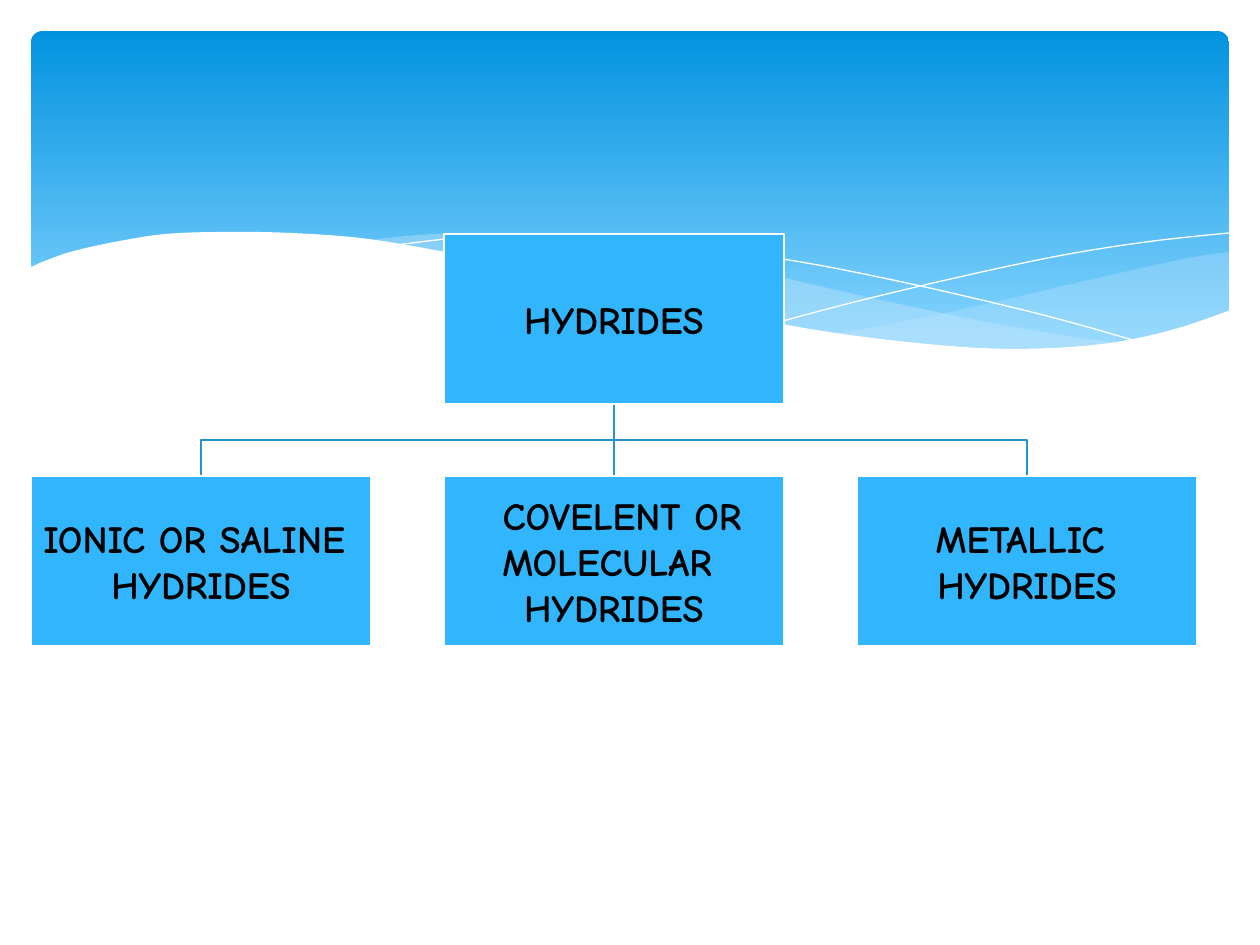
"""Builds a slide that charts the three classes of hydrides under a wavy blue band."""
import pptx
import pptx.dml.color
import pptx.enum.dml
import pptx.enum.shapes
import pptx.enum.text
import pptx.oxml
import pptx.oxml.ns
import pptx.util

SCALE = 914400 / 126
COLORS = {
    "band_top": "0293E0",
    "band_bottom": "83D3FE",
    "wave": "C6E7FC",
    "white": "FFFFFF",
    "branch": "2792CB",
    "box": "31B6FD",
    "text": "000000",
}
BOX_WIDTH, BOX_HEIGHT = 340, 170
BOX_LEFT, BOX_STEP = 31, 413
ROOT_TOP, LEAF_TOP = 234, 476

RIGHT_WAVE_TOP = [(1229, 252), (1194, 257), (1142, 268), (1085, 281), (982, 305),
                  (890, 324), (833, 334)]
RIGHT_WAVE_BOTTOM = [(833, 334), (888, 342), (954, 348), (1012, 350), (1076, 348),
                     (1130, 340), (1178, 330), (1229, 311)]
MIDDLE_WAVE_TOP = [(1125, 344), (1055, 334), (977, 320), (890, 302), (793, 280), (717, 262),
                   (648, 249), (586, 241), (503, 234), (433, 234), (360, 241)]
MIDDLE_WAVE_BOTTOM = [(360, 241), (431, 251), (509, 266), (566, 280), (668, 302), (757, 321),
                      (838, 335), (910, 345), (974, 349), (1043, 350), (1125, 344)]
FALLING_LINE = [(389, 246), (457, 238), (524, 236), (616, 239), (701, 248), (801, 262),
                (916, 285), (1047, 316), (1143, 343)]
RISING_LINE = [(772, 324), (847, 304), (942, 281), (1053, 257), (1146, 242), (1229, 233)]
WHITE_EDGE = [(1231, 310), (1172, 330), (1103, 344), (1019, 349), (937, 345), (842, 334),
              (760, 320), (667, 301), (563, 277), (460, 255), (368, 239), (290, 233),
              (223, 232), (166, 234), (120, 241), (74, 251), (45, 261), (29, 268)]

LEAVES = [
    [("IONIC OR SALINE ", 0), ("HYDRIDES", 0)],
    [("COVELENT OR", 16), ("MOLECULAR ", 0), ("HYDRIDES", 0)],
    [("METALLIC ", 0), ("HYDRIDES", 0)],
]


def emu(pixels):
    return pptx.util.Emu(round(pixels * SCALE))


def rgb(name):
    return pptx.dml.color.RGBColor.from_string(COLORS[name])


def smooth_curve(points, steps=5):
    padded = [points[0], *points, points[-1]]
    curve = [points[0]]
    for a, b, c, d in zip(padded, padded[1:], padded[2:], padded[3:]):
        for t in (step / steps for step in range(1, steps + 1)):
            curve.append(tuple(
                (2 * q + (r - p) * t + (2 * p - 5 * q + 4 * r - s) * t ** 2
                 + (3 * q - p - 3 * r + s) * t ** 3) / 2
                for p, q, r, s in zip(a, b, c, d)))
    return curve


class SlideBuilder:
    def __init__(self, slide, font="Comic Neue", size=22, line_width=1.25):
        self.slide = slide
        self.font = font
        self.size = size
        self.line_width = line_width

    def band(self, left, top, width, height):
        shape = self.slide.shapes.add_shape(
            pptx.enum.shapes.MSO_SHAPE.ROUNDED_RECTANGLE,
            emu(left), emu(top), emu(width), emu(height))
        shape.adjustments[0] = 0.034
        shape.shadow.inherit = False
        shape.line.fill.background()
        shape.fill.gradient()
        shape.fill.gradient_angle = 270
        stops = zip(shape.fill.gradient_stops, (0, 0.9), ("band_top", "band_bottom"))
        for stop, position, color in stops:
            stop.position = position
            stop.color.rgb = rgb(color)

    def outline(self, points, closed):
        corners = [(emu(x), emu(y)) for x, y in points]
        builder = self.slide.shapes.build_freeform(*corners[0])
        builder.add_line_segments(corners[1:], close=closed)
        shape = builder.convert_to_shape()
        shape.shadow.inherit = False
        return shape

    def area(self, points, color, opacity=100):
        shape = self.outline(points, True)
        shape.line.fill.background()
        shape.fill.solid()
        shape.fill.fore_color.rgb = rgb(color)
        if opacity < 100:
            color_element = shape.fill._xPr.find(".//" + pptx.oxml.ns.qn("a:srgbClr"))
            alpha = pptx.oxml.parse_xml(
                f'<a:alpha {pptx.oxml.ns.nsdecls("a")} val="{opacity * 1000}"/>')
            color_element.append(alpha)

    def polyline(self, points, color, width):
        shape = self.outline(points, False)
        shape.fill.background()
        shape.line.color.rgb = rgb(color)
        shape.line.width = pptx.util.Pt(width)

    def branch(self, points):
        self.polyline(points, "branch", self.line_width)

    def trunk(self, x, top, bottom):
        connector = self.slide.shapes.add_connector(
            pptx.enum.shapes.MSO_CONNECTOR.STRAIGHT, emu(x), emu(top), emu(x), emu(bottom))
        connector.line.color.rgb = rgb("branch")
        connector.line.width = pptx.util.Pt(self.line_width)
        effects = pptx.oxml.parse_xml(f'<a:effectLst {pptx.oxml.ns.nsdecls("a")}/>')
        connector._element.spPr.append(effects)

    def box(self, left, top, lines):
        shape = self.slide.shapes.add_shape(
            pptx.enum.shapes.MSO_SHAPE.RECTANGLE,
            emu(left), emu(top), emu(BOX_WIDTH), emu(BOX_HEIGHT))
        shape.shadow.inherit = False
        shape.fill.solid()
        shape.fill.fore_color.rgb = rgb("box")
        shape.line.color.rgb = rgb("white")
        shape.line.width = pptx.util.Pt(self.line_width)
        frame = shape.text_frame
        frame.word_wrap = True
        frame.vertical_anchor = pptx.enum.text.MSO_ANCHOR.MIDDLE
        frame.margin_left = frame.margin_right = emu(2)
        frame.margin_top = frame.margin_bottom = emu(2)
        for index, (text, indent) in enumerate(lines):
            paragraph = frame.add_paragraph() if index else frame.paragraphs[0]
            paragraph.alignment = pptx.enum.text.PP_ALIGN.CENTER
            if indent:
                paragraph._p.get_or_add_pPr().set("marL", str(emu(indent)))
            run = paragraph.add_run()
            run.text = text
            run.font.name = self.font
            run.font.size = pptx.util.Pt(self.size)
            run.font.bold = True
            run.font.color.rgb = rgb("text")


def main():
    presentation = pptx.Presentation()
    presentation.slide_width = pptx.util.Inches(10)
    presentation.slide_height = pptx.util.Inches(7.5)
    builder = SlideBuilder(presentation.slides.add_slide(presentation.slide_layouts[6]))

    builder.band(31, 31, 1198, 340)
    builder.area(smooth_curve(RIGHT_WAVE_TOP) + smooth_curve(RIGHT_WAVE_BOTTOM), "wave", 29)
    builder.area(smooth_curve(MIDDLE_WAVE_TOP) + smooth_curve(MIDDLE_WAVE_BOTTOM), "wave", 40)
    for line in (FALLING_LINE, RISING_LINE):
        builder.polyline(smooth_curve(line), "white", 0)
    builder.area(smooth_curve(WHITE_EDGE) + [(29, 415), (1231, 415)], "white")

    lefts = [BOX_LEFT + BOX_STEP * column for column in range(len(LEAVES))]
    centers = [left + BOX_WIDTH // 2 for left in lefts]
    root_bottom = ROOT_TOP + BOX_HEIGHT
    middle = (root_bottom + LEAF_TOP) // 2
    for center in (centers[2], centers[0]):
        builder.branch([(centers[1], root_bottom), (centers[1], middle),
                        (center, middle), (center, LEAF_TOP)])
    builder.trunk(centers[1], root_bottom, LEAF_TOP)

    builder.box(lefts[1], ROOT_TOP, [("HYDRIDES", 0)])
    for left, lines in zip(lefts, LEAVES):
        builder.box(left, LEAF_TOP, lines)
    presentation.save("out.pptx")


if __name__ == "__main__":
    main()
